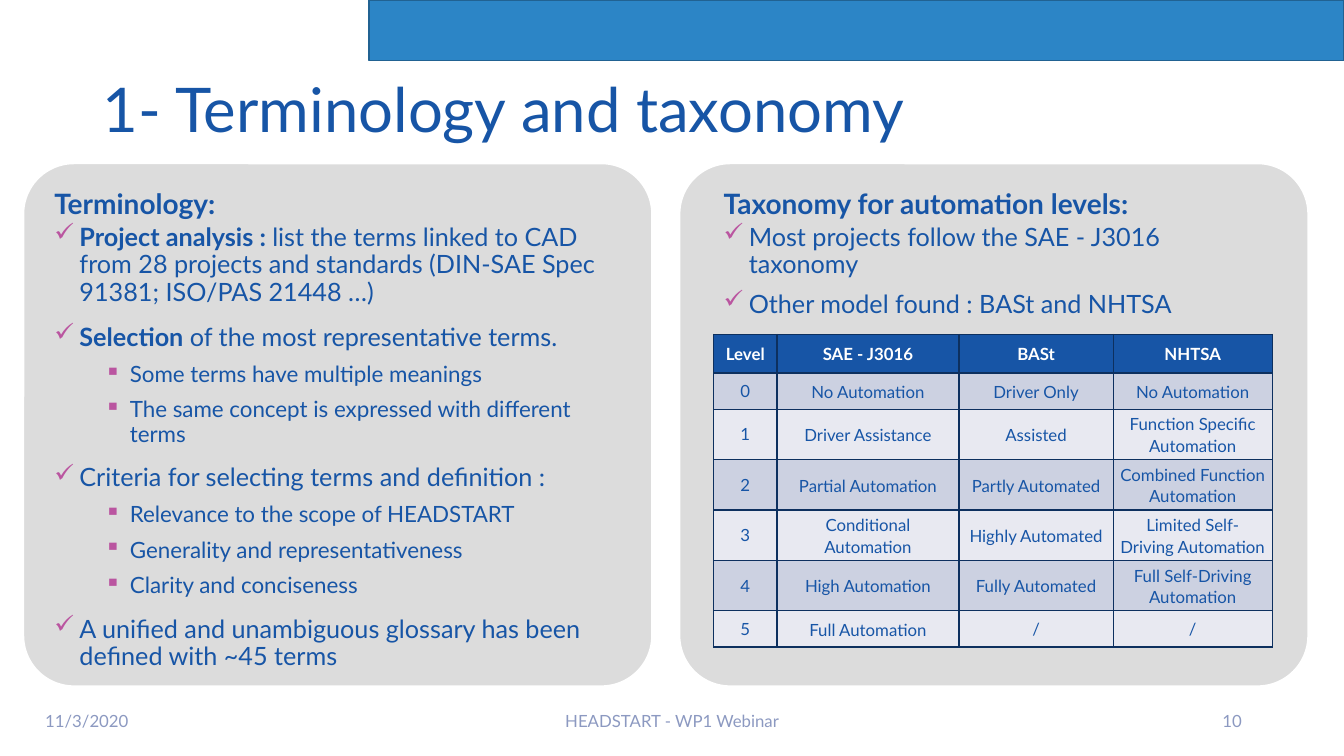
from dataclasses import dataclass
from typing import Any

from lxml.etree import SubElement as Sub
from pptx import Presentation
from pptx.dml.color import RGBColor as RGB
from pptx.enum.shapes import MSO_SHAPE as Kind
from pptx.enum.text import MSO_ANCHOR as Anchor, PP_ALIGN as Align
from pptx.oxml.ns import qn
from pptx.util import Pt

BLUE, PINK, GREY, PALE = "1755A6", "BA55A0", "C6C6C6", "8C99C1"
WHITE, EDGE, BANDS = "FFFFFF", "0D305F", ("E8E9F1", "CCD1E1")


@dataclass
class Box:
    left: float
    top: float
    width: float
    height: float

    def place(self) -> tuple[Pt, ...]:
        return Pt(self.left), Pt(self.top), Pt(self.width), Pt(self.height)


@dataclass
class Panel:
    box: Box
    fill: str
    line: str
    weight: float
    round: float = 0
    alpha: int = 100


@dataclass
class Para:
    text: str
    size: float = 18
    lead: str = ""  # bold opening words
    mark: str = ""
    level: int = 0
    before: float = 0
    after: float = 3
    space: float = 0.9
    color: str = BLUE
    align: Any = Align.LEFT


@dataclass
class Label:
    box: Box
    paras: list[Para]
    anchor: Any = Anchor.TOP


def rgb(code: str) -> RGB:
    return RGB.from_string(code)


def style(item: Any, form: dict[str, Any]) -> None:
    for name, value in form.items():
        setattr(item, name, value)


def bullet(para: Any, mark: str, level: int) -> None:
    props = para._p.get_or_add_pPr()
    props.set("marL", str(Pt(18 + 36 * level)))
    props.set("indent", str(Pt(-18)))
    Sub(Sub(props, qn("a:buClr")), qn("a:srgbClr"), val=PINK)
    Sub(props, qn("a:buChar"), char=mark)


def write(frame: Any, paras: list[Para]) -> None:
    for i, para in enumerate(paras):
        line = frame.add_paragraph() if i else frame.paragraphs[0]
        if para.mark:
            bullet(line, para.mark, para.level)
        style(line, {"alignment": para.align, "level": para.level,
                     "line_spacing": para.space, "space_before": Pt(para.before),
                     "space_after": Pt(para.after)})
        for text, bold in ((para.lead, True), (para.text, False)):
            if text:
                run = line.add_run()
                run.text = text
                style(run.font, {"name": "Lato", "size": Pt(para.size), "bold": bold})
                run.font.color.rgb = rgb(para.color)


def panel(slide: Any, item: Panel) -> None:
    kind = Kind.ROUNDED_RECTANGLE if item.round else Kind.RECTANGLE
    shape = slide.shapes.add_shape(kind, *item.box.place())
    shape.shadow.inherit = False
    if item.round:
        shape.adjustments[0] = item.round
    shape.fill.solid()
    shape.fill.fore_color.rgb = rgb(item.fill)
    if item.alpha < 100:
        tint = shape.element.spPr.find(qn("a:solidFill"))[0]
        Sub(tint, qn("a:alpha"), val=str(item.alpha * 1000))
    shape.line.color.rgb = rgb(item.line)
    shape.line.width = Pt(item.weight)


def label(slide: Any, item: Label) -> None:
    frame = slide.shapes.add_textbox(*item.box.place()).text_frame
    style(frame, {"word_wrap": True, "vertical_anchor": item.anchor})
    write(frame, item.paras)


def border(cell: Any) -> None:
    props = cell._tc.get_or_add_tcPr()
    for side in ("lnL", "lnR", "lnT", "lnB"):
        line = Sub(props, qn(f"a:{side}"), w=str(Pt(1)))
        Sub(Sub(line, qn("a:solidFill")), qn("a:srgbClr"), val=EDGE)


def grid(slide: Any, box: Box, cols: list[float], tall: list[float],
         rows: list[list[str]]) -> None:
    table = slide.shapes.add_table(len(rows), len(cols), *box.place()).table
    table.horz_banding = False
    for col, width in zip(table.columns, cols):
        col.width = Pt(width)
    for r, texts in enumerate(rows):
        table.rows[r].height = Pt(tall[r])
        for c, text in enumerate(texts):
            cell = table.cell(r, c)
            border(cell)
            cell.fill.solid()
            cell.fill.fore_color.rgb = rgb(BANDS[r % 2] if r else BLUE)
            cell.vertical_anchor = Anchor.MIDDLE
            prose = r > 0 and c > 0 and text != "/"
            if prose:
                style(cell, {"margin_left": Pt(5), "margin_right": Pt(5),
                             "margin_top": 0, "margin_bottom": 0})
            write(cell.text_frame, [Para(
                text if r else "", 12, lead="" if r else text, after=0,
                space=1.07 if prose else 1, color=BLUE if r else WHITE,
                align=Align.CENTER)])


def check(text: str, lead: str = "", before: float = 10, after: float = 3) -> Para:
    return Para(text, lead=lead, mark="✓", before=before, after=after)


def point(text: str) -> Para:
    return Para(text, 16, mark="▪", level=1, before=5)


def foot(left: float, width: float, text: str, align: Any) -> Label:
    return Label(Box(left, 500.4, width, 28.8),
                 [Para(text, 12, after=0, space=1, color=PALE, align=align)],
                 Anchor.MIDDLE)


# Banner and the two cards
PANELS = [Panel(Box(263.5, 0, 696.5, 43.2), "2C85C6", "216292", 1)] + [
    Panel(Box(left, 116.6, 449.3, 373.7), GREY, WHITE, 1.5, 0.097, 61)
    for left in (16.6, 485.3)]

# Title, card texts and footer
LABELS = [
    Label(Box(66.2, 53.3, 634.3, 53.3),
          [Para("1- Terminology and taxonomy", 44, after=0)]),
    Label(Box(31.7, 132.5, 421.2, 351.4), [
        Para("", 20, lead="Terminology:"),
        check("list the terms linked to CAD from 28 projects and standards "
              "(DIN-SAE Spec 91381; ISO/PAS 21448 …)", "Project analysis : ", 0),
        check(" of the most representative terms.", "Selection"),
        point("Some terms have multiple meanings"),
        point("The same concept is expressed with different terms"),
        check("Criteria for selecting terms and definition :"),
        point("Relevance to the scope of HEADSTART"),
        point("Generality and representativeness"),
        point("Clarity and conciseness"),
        check("A unified and unambiguous glossary has been defined with ~45 terms"),
    ]),
    Label(Box(509.8, 132.5, 386.6, 96.5), [
        Para("", 20, lead="Taxonomy for automation levels:"),
        check("Most projects follow the SAE - J3016 taxonomy", before=0),
        check("Other model found : BASt and NHTSA", before=6, after=6),
    ]),
    foot(25.2, 216, "11/3/2020", Align.LEFT),
    foot(318.2, 324, "HEADSTART - WP1 Webinar", Align.CENTER),
    foot(678.2, 216, "10", Align.RIGHT),
]

# Automation levels
LEVELS = [
    ["Level", "SAE - J3016", "BASt", "NHTSA"],
    ["0", "No Automation", "Driver Only", "No Automation"],
    ["1", "Driver Assistance", "Assisted", "Function Specific Automation"],
    ["2", "Partial Automation", "Partly Automated", "Combined Function Automation"],
    ["3", "Conditional Automation", "Highly Automated",
     "Limited Self-Driving Automation"],
    ["4", "High Automation", "Fully Automated", "Full Self-Driving Automation"],
    ["5", "Full Automation", "/", "/"],
]


def main() -> None:
    deck = Presentation()
    style(deck, {"slide_width": Pt(960), "slide_height": Pt(540)})
    slide = deck.slides.add_slide(deck.slide_layouts[6])
    for item in PANELS:
        panel(slide, item)
    for item in LABELS:
        label(slide, item)
    grid(slide, Box(509.8, 239, 399, 223.2), [45.2, 130, 110.2, 113.6],
         [27.4, 25.9, 36, 36, 36, 36, 25.9], LEVELS)
    deck.save("out.pptx")


if __name__ == "__main__":
    main()
